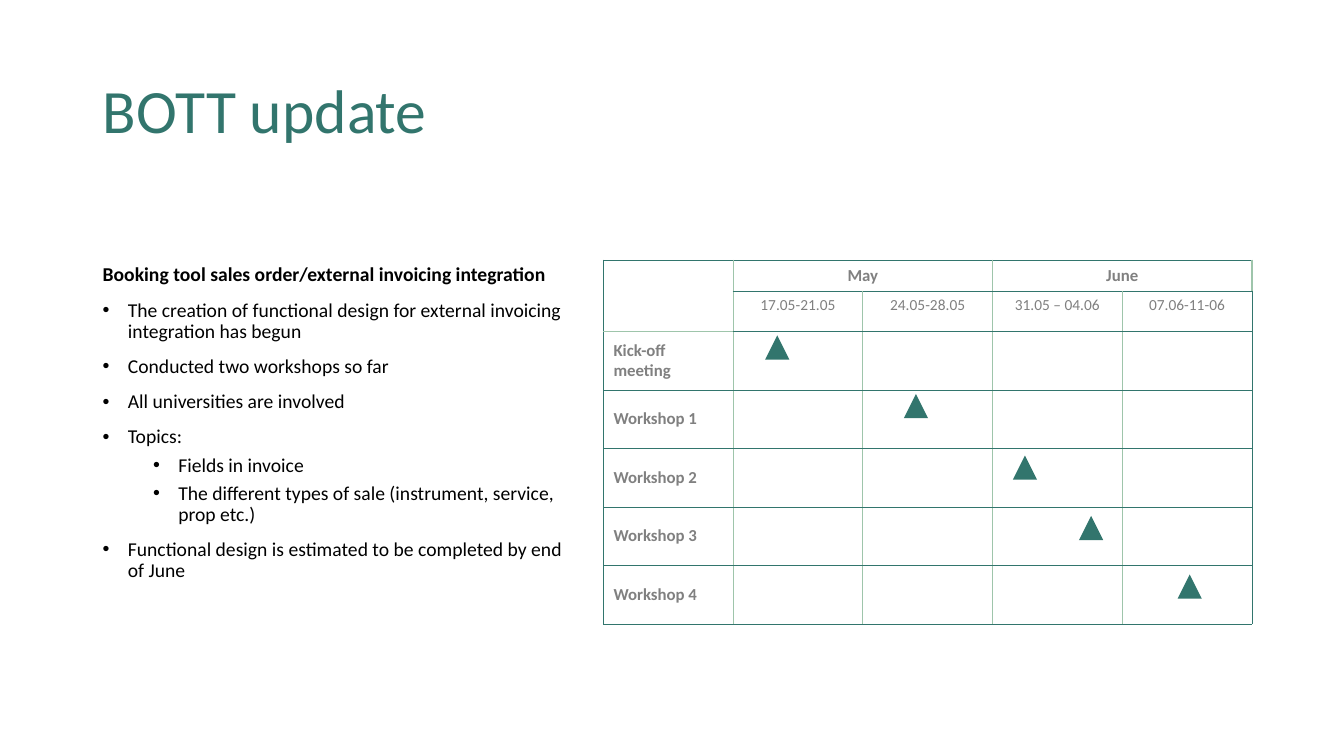
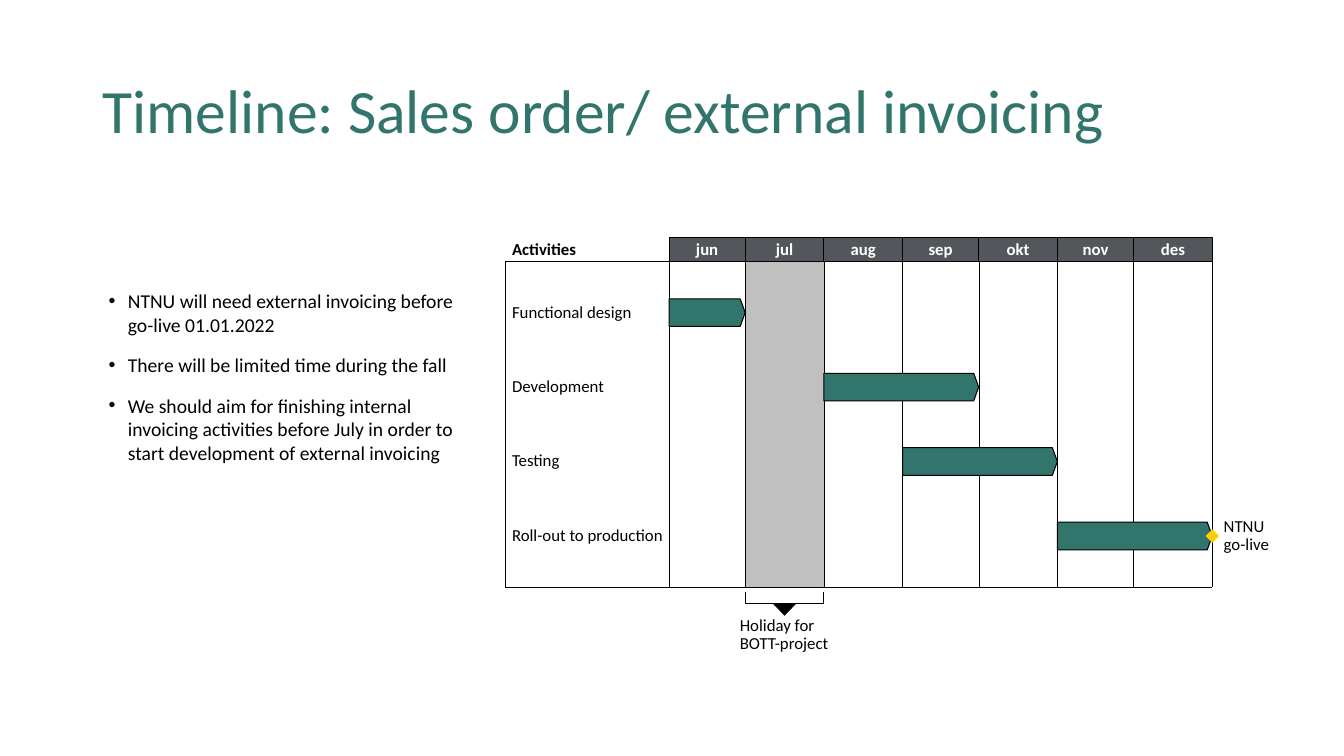
from itertools import accumulate

from lxml.etree import SubElement
from pptx import Presentation
from pptx.dml.color import RGBColor
from pptx.enum.shapes import MSO_CONNECTOR, MSO_SHAPE as SHAPE
from pptx.enum.text import MSO_ANCHOR as ANCHOR, PP_ALIGN as ALIGN
from pptx.oxml import parse_xml
from pptx.oxml.ns import nsdecls, qn
from pptx.util import Inches, Pt

GREEN, PALE_GREEN = "32756D", "9EC5AB"
BLACK, WHITE, GREY, SILVER, SLATE = "000000", "FFFFFF", "808080", "C0C0C0", "53565A"
GOLD = "FFCD00"


def color(code):
    return RGBColor.from_string(code)


def write(paragraph, text, size=12, ink=BLACK, bold=False, align=ALIGN.LEFT,
          spacing=None, before=0, after=0, bullet=None, level=0):
    """Fill a paragraph; bullet is its (left, hanging) indent in inches."""
    if level:
        paragraph.level = level
    if bullet:
        props = paragraph._p.get_or_add_pPr()
        left, hanging = bullet
        props.set("marL", str(Inches(left)))
        props.set("indent", str(-Inches(hanging)))
        SubElement(props, qn("a:buFont"), typeface="Arial")
        SubElement(props, qn("a:buChar"), char="•")
    paragraph.alignment = align
    paragraph.space_before, paragraph.space_after = Pt(before), Pt(after)
    if spacing:
        paragraph.line_spacing = spacing
    run = paragraph.add_run()
    run.text = text
    run.font.name, run.font.size, run.font.bold = "Calibri", Pt(size), bold
    run.font.color.rgb = color(ink)


class Deck:
    """Draws on the current slide; lengths are percent of its width and height."""

    def __init__(self):
        self.file = Presentation()
        self.file.slide_width, self.file.slide_height = Inches(13.333), Inches(7.5)

    def x(self, share):
        return round(self.file.slide_width * share / 100)

    def y(self, share):
        return round(self.file.slide_height * share / 100)

    def box(self, left, top, width, height):
        return self.x(left), self.y(top), self.x(width), self.y(height)

    def new_slide(self, title):
        self.shapes = self.file.slides.add_slide(self.file.slide_layouts[6]).shapes
        self.text((6.9, 5.33, 86.25, 19.33), [(title, {})], anchor=ANCHOR.MIDDLE,
                  size=44, ink=GREEN, spacing=0.9)

    def fill_frame(self, frame, lines, anchor, inset, **style):
        """Write (text, overrides) lines, each in the common style."""
        frame.word_wrap, frame.vertical_anchor = True, anchor
        if inset is not None:
            frame.margin_left = frame.margin_right = Inches(inset)
            frame.margin_top = frame.margin_bottom = Inches(inset)
        for number, (line, overrides) in enumerate(lines):
            paragraph = frame.add_paragraph() if number else frame.paragraphs[0]
            write(paragraph, line, **{**style, **overrides})

    def text(self, place, lines, anchor=ANCHOR.TOP, inset=None, **style):
        frame = self.shapes.add_textbox(*self.box(*place)).text_frame
        self.fill_frame(frame, lines, anchor, inset, **style)

    def label(self, place, *lines, **style):
        self.text(place, [(line, {}) for line in lines], anchor=ANCHOR.MIDDLE,
                  inset=0, spacing=0.9, **style)

    def shape(self, kind, place, fill=None, line=None, turn=0, adjust=None):
        """Draw a shape whose place is the box it fills after turning."""
        left, top, width, height = self.box(*place)
        if turn == 90:
            left, top = left + (width - height) // 2, top + (height - width) // 2
            width, height = height, width
        shape = self.shapes.add_shape(kind, left, top, width, height)
        shape.shadow.inherit = False
        shape.rotation = turn
        if adjust is not None:
            shape.adjustments[0] = adjust
        if fill:
            shape.fill.solid()
            shape.fill.fore_color.rgb = color(fill)
        else:
            shape.fill.background()
        if line:
            shape.line.color.rgb, shape.line.width = color(line), Pt(0.75)
        else:
            shape.line.fill.background()
        return shape

    def centred(self, kind, x, y, width, height, **look):
        self.shape(kind, (x - width / 2, y - height / 2, width, height), **look)

    def line(self, x1, y1, x2, y2, weight=0.75):
        rule = self.shapes.add_connector(MSO_CONNECTOR.STRAIGHT, self.x(x1), self.y(y1),
                                         self.x(x2), self.y(y2))
        rule.line.color.rgb, rule.line.width = color(BLACK), Pt(weight)
        SubElement(rule._element.spPr, qn("a:effectLst"))

    def table(self, place, heights, columns):
        """Add an unfilled table with equal columns."""
        table = self.shapes.add_table(len(heights), columns, *self.box(*place)).table
        table.first_row = table.horz_banding = False
        for column in table.columns:
            column.width = self.x(place[2] / columns)
        for row, height in zip(table.rows, heights):
            row.height = self.y(height)
        for cell in table.iter_cells():
            cell.fill.background()
        return table


def set_borders(cell, **sides):
    """Give each side (L, R, T, B) its colour; green is thin, pale green wider."""
    props = cell._tc.get_or_add_tcPr()
    for position, side in enumerate("LRTB"):
        width = Pt(0.5 if sides[side] == GREEN else 1)
        props.insert(position, parse_xml(
            f'<a:ln{side} {nsdecls("a")} w="{width}"><a:solidFill>'
            f'<a:srgbClr val="{sides[side]}"/></a:solidFill></a:ln{side}>'))


def add_update(deck):
    deck.new_slide("BOTT update")
    point = dict(bullet=(0.25, 0.25), before=10)
    subpoint = dict(bullet=(0.75, 0.25), before=5, level=1)
    deck.text((6.9, 34.4, 36.3, 55.6), [
        ("Booking tool sales order/external invoicing integration", dict(bold=True)),
        ("The creation of functional design for external invoicing integration has begun",
         point),
        ("Conducted two workshops so far", point),
        ("All universities are involved", point),
        ("Topics:", point),
        ("Fields in invoice", subpoint),
        ("The different types of sale (instrument, service, prop etc.)", subpoint),
        ("Functional design is estimated to be completed by end of June", point),
    ], size=14, spacing=0.9)

    left, top, width, columns = 44.9, 34.4, 48.25, 5
    header_height, row_height = 4.08, 7.75
    rows = [
        ["", "May", "", "June", ""],
        ["", "17.05-21.05", "24.05-28.05", "31.05 – 04.06", "07.06-11-06"],
    ]
    meetings = ["Kick-off meeting"] + [f"Workshop {n}" for n in range(1, 5)]
    rows += [[meeting] + [""] * (columns - 1) for meeting in meetings]
    heights = [header_height] * 2 + [row_height] * len(meetings)
    schedule = deck.table((left, top, width, sum(heights)), heights, columns)
    for r, row in enumerate(rows):
        for c, entry in enumerate(row):
            cell = schedule.cell(r, c)
            cell.vertical_anchor = ANCHOR.MIDDLE if c == 0 else ANCHOR.TOP
            write(cell.text_frame.paragraphs[0], entry, size=11 if r == 1 else 12,
                  ink=GREY, bold=r != 1, align=ALIGN.CENTER if c else ALIGN.LEFT)
            set_borders(cell, L=PALE_GREEN if c else GREEN,
                        R=PALE_GREEN if c < columns - 1 else GREEN,
                        T=PALE_GREEN if (r, c) == (2, 0) else GREEN,
                        B=PALE_GREEN if c == 0 and r < 2 else GREEN)
    for start, end in [((0, 0), (1, 0)), ((0, 1), (0, 2)), ((0, 3), (0, 4))]:
        schedule.cell(*start).merge(schedule.cell(*end))

    # Milestones in table columns and meeting rows
    for column, row in [(1.34, 0.44), (2.41, 1.44), (3.25, 2.49), (3.76, 3.52), (4.52, 4.52)]:
        deck.centred(SHAPE.ISOSCELES_TRIANGLE, left + column * width / columns,
                     top + 2 * header_height + row * row_height, 1.8, 3.2, fill=GREEN)


def add_timeline(deck):
    deck.new_slide("Timeline: Sales order/ external invoicing")
    left, first_month, right = 37.58, 49.78, 90.2
    header, top, bottom = 31.45, 34.6, 77.7
    month_days = dict(jun=30, jul=31, aug=31, sep=30, okt=31, nov=30, des=31)
    day = (right - first_month) / sum(month_days.values())
    edges = [first_month + days * day
             for days in accumulate(month_days.values(), initial=0)]
    holiday, after_holiday = edges[1:3]
    holiday_width = after_holiday - holiday
    holiday_middle = holiday + holiday_width / 2

    deck.shape(SHAPE.RECTANGLE, (holiday, top, holiday_width, bottom - top), fill=SILVER)
    for month, start, end in zip(month_days, edges, edges[1:]):
        heading = deck.shape(SHAPE.RECTANGLE, (start, header, end - start, top - header),
                             fill=SLATE, line=BLACK)
        deck.fill_frame(heading.text_frame, [(month, {})], ANCHOR.MIDDLE, 0, ink=WHITE,
                        bold=True, align=ALIGN.CENTER, spacing=0.9)
    for edge in [left] + edges:
        outer = edge in (left, edges[0], edges[-1])
        deck.line(edge, top, edge, bottom, 0.75 if outer else 0.25)
    for height in (top, bottom):
        deck.line(left, height, right, height)

    label_left, label_width = 38.1, 11.6
    deck.label((label_left, header, label_width, top - header), "Activities", bold=True)
    first_row, row_pitch, bar_height = 41.35, 9.85, 3.65
    activities = [("Functional design", 0, 1), ("Development", 2, 4),
                  ("Testing", 3, 5), ("Roll-out to production", 5, 7)]
    for row, (activity, start, end) in enumerate(activities):
        middle = first_row + row * row_pitch
        bar_top = middle - bar_height / 2
        deck.label((label_left, bar_top, label_width, bar_height), activity)
        deck.shape(SHAPE.PENTAGON,
                   (edges[start], bar_top, edges[end] - edges[start], bar_height),
                   fill=GREEN, line=BLACK, adjust=0.18)
    deck.centred(SHAPE.DIAMOND, right, middle, 0.9, 1.6, fill=GOLD, line=GOLD)
    deck.label((91.05, middle - 2.4, 5, 4.8), "NTNU", "go-live")

    deck.shape(SHAPE.RIGHT_BRACKET, (holiday, 78.25, holiday_width, 1.6), line=BLACK,
               turn=90, adjust=0)
    deck.centred(SHAPE.ISOSCELES_TRIANGLE, holiday_middle, 80.65, 1.73, 1.6,
                 fill=BLACK, turn=180)
    deck.label((55.05, 81.6, 7.2, 4.8), "Holiday for", "BOTT-project")

    deck.text((7.35, 37.6, 27.3, 24.7), [
        ("NTNU will need external invoicing before go-live 01.01.2022", {}),
        ("There will be limited time during the fall", {}),
        ("We should aim for finishing internal invoicing activities before July in order "
         "to start development of external invoicing", {}),
    ], size=14, bullet=(0.19, 0.19), after=12)


def main():
    deck = Deck()
    add_update(deck)
    add_timeline(deck)
    deck.file.save("out.pptx")


if __name__ == "__main__":
    main()
